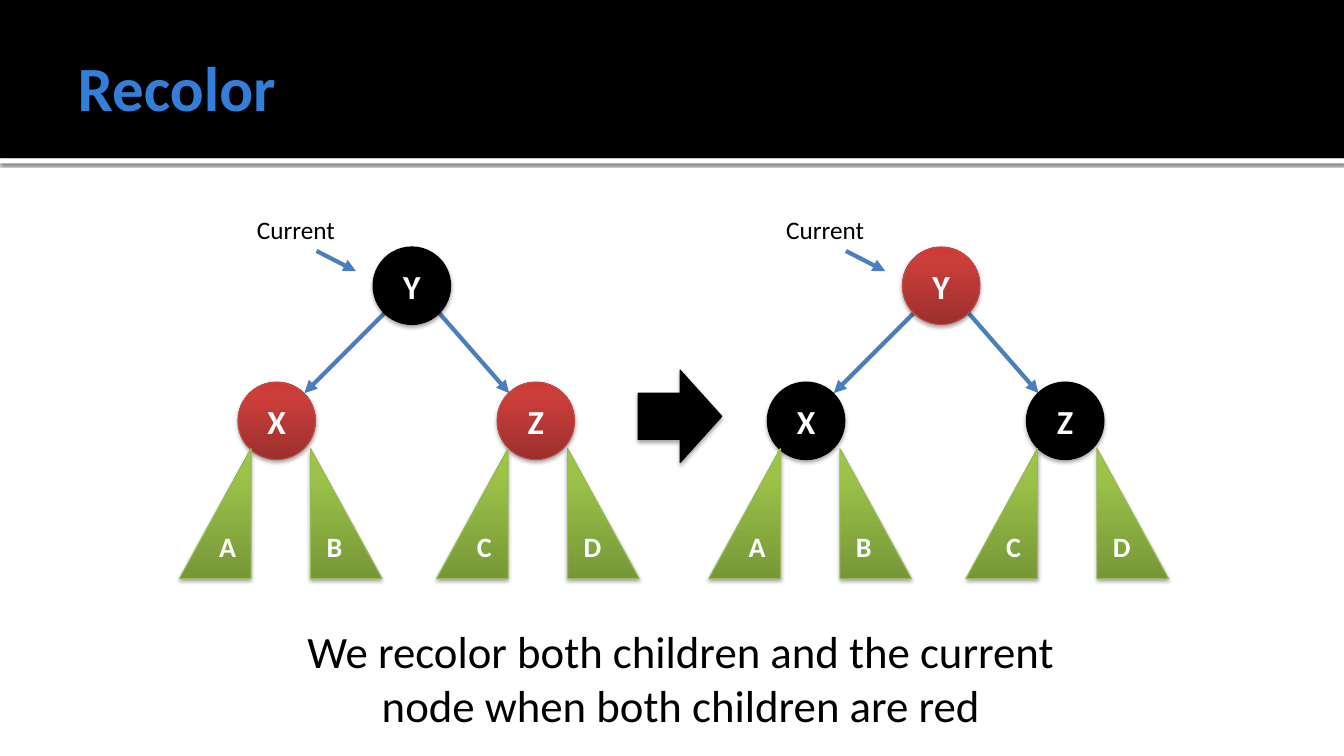
"""Build a slide showing the recolor step of a red-black tree insertion."""
from lxml import etree
from pptx import Presentation
from pptx.dml.color import RGBColor
from pptx.enum.shapes import MSO_CONNECTOR, MSO_SHAPE as SHAPE
from pptx.enum.text import MSO_ANCHOR, MSO_AUTO_SIZE, PP_ALIGN
from pptx.oxml.ns import qn
from pptx.util import Inches, Pt

TITLE = "Recolor"
CAPTION = "We recolor both children and the current node when both children are red"
POINTER = "Current"
FONT = "Calibri"
BLACK, WHITE, BLUE, ARROW = "000000", "FFFFFF", "337ED9", "4B7EBC"

STYLES = {
    "black": ([BLACK], BLACK),
    "red": (["9C2F2D", "CB3E3A", "CE3B37"], "BF4C48"),
    "green": (["779737", "9BC348", "9DC746"], "98B955"),
}
STOPS = [0, 80, 100]

TREES = [
    (0, {"Y": "black", "X": "red", "Z": "red"}),
    (5.25, {"Y": "red", "X": "black", "Z": "black"}),
]
PARTS = [
    ("Y", 3.7, 2.45), ("X", 2.36, 3.79), ("B", 3.08, 4.45), ("A", 1.78, 4.45),
    ("D", 5.63, 4.45), ("Z", 4.93, 3.79), ("C", 4.33, 4.45),
]
LEFT_SUBTREES = "AC"
ARROWS = [
    (3.81, 3.11, 3.02, 3.9),
    (4.36, 3.11, 5.05, 3.9),
    (3.14, 2.49, 3.53, 2.69),
]
NODE, SUBTREE = (0.77, 0.77), (0.71, 1.29)


def rgb(color):
    return RGBColor.from_string(color)


def add_node(parent, tag, **attrs):
    return etree.SubElement(parent, qn(tag), {k: str(v) for k, v in attrs.items()})


def write(shape, text, size, color, bold=False, align=PP_ALIGN.LEFT):
    tf = shape.text_frame
    tf.word_wrap = True
    p = tf.paragraphs[0]
    p.alignment = align
    r = p.add_run()
    r.text = text
    f = r.font
    f.name, f.size, f.bold = FONT, Pt(size), bold
    f.color.rgb = rgb(color)
    return tf


def paint(shape, colors, outline=None):
    if len(colors) == 1:
        shape.fill.solid()
        shape.fill.fore_color.rgb = rgb(colors[0])
    else:
        shape.fill.gradient()
        shape.fill.gradient_angle = 90
        stops = shape.element.spPr.find(".//" + qn("a:gsLst"))
        stops[:] = []
        for pos, color in zip(STOPS, colors):
            gs = add_node(stops, "a:gs", pos=pos * 1000)
            add_node(gs, "a:srgbClr", val=color)
    if outline:
        shape.line.color.rgb = rgb(outline)
        shape.line.width = Pt(0.75)
    else:
        shape.line.fill.background()
    shape.shadow.inherit = False


def cast_shadow(shape, alpha=35, blur=3.1, dist=1.8):
    effects = shape.element.spPr.find(qn("a:effectLst"))
    shadow = add_node(effects, "a:outerShdw", blurRad=Pt(blur), dist=Pt(dist),
                      dir=90 * 60000, rotWithShape=0)
    color = add_node(shadow, "a:srgbClr", val=BLACK)
    add_node(color, "a:alpha", val=alpha * 1000)


def add_box(shapes, kind, x, y, w, h, style):
    shape = shapes.add_shape(kind, Inches(x), Inches(y), Inches(w), Inches(h))
    paint(shape, *STYLES[style])
    cast_shadow(shape)
    return shape


def add_arrow(shapes, x1, y1, x2, y2):
    c = shapes.add_connector(MSO_CONNECTOR.STRAIGHT, Inches(x1), Inches(y1),
                             Inches(x2), Inches(y2))
    c.line.color.rgb = rgb(ARROW)
    c.line.width = Pt(3)
    add_node(c.line._get_or_add_ln(), "a:tailEnd", type="triangle")
    add_node(c.element.spPr, "a:effectLst")


def add_label(shapes, text, x, y, w, h, size, align=PP_ALIGN.LEFT):
    box = shapes.add_textbox(Inches(x), Inches(y), Inches(w), Inches(h))
    tf = write(box, text, size, BLACK, align=align)
    tf.auto_size = MSO_AUTO_SIZE.SHAPE_TO_FIT_TEXT


def add_tree(s, dx, node_colors):
    shapes = s.shapes.add_group_shape().shapes
    for x1, y1, x2, y2 in ARROWS:
        add_arrow(shapes, x1 + dx, y1, x2 + dx, y2)
    for name, x, y in PARTS:
        is_node = name in node_colors
        kind, size, pt = ((SHAPE.OVAL, NODE, 24) if is_node
                          else (SHAPE.RIGHT_TRIANGLE, SUBTREE, 20))
        shape = add_box(shapes, kind, x + dx, y, *size, node_colors.get(name, "green"))
        if name in LEFT_SUBTREES:
            shape.element.spPr.find(qn("a:xfrm")).set("flipH", "1")
        tf = write(shape, name, pt, WHITE, True, PP_ALIGN.CENTER)
        tf.vertical_anchor = MSO_ANCHOR.MIDDLE
    add_label(shapes, POINTER, 2.45 + dx, 2.08, 2.9, 0.4, 18)


def add_header(s):
    title = s.shapes.title
    for y, h, color in [(1.57, 0.05, WHITE), (0, 1.57, BLACK)]:
        band = s.shapes.add_shape(SHAPE.RECTANGLE, 0, Inches(y), Inches(13.33), Inches(h))
        paint(band, [color])
        if color == WHITE:
            cast_shadow(band, 60, 2.5, 0.8)
    s.shapes.element.append(title.element)
    title.left, title.top = Inches(0.67), Inches(0.17)
    title.width, title.height = Inches(12), Inches(1.37)
    tf = write(title, TITLE, 45, BLUE, True)
    tf.auto_size = MSO_AUTO_SIZE.NONE
    tf.vertical_anchor = MSO_ANCHOR.MIDDLE
    tf.margin_left = Inches(0.1)
    tf.margin_top = tf.margin_right = tf.margin_bottom = Inches(0.05)


def main():
    prs = Presentation()
    prs.slide_width, prs.slide_height = Inches(13.33), Inches(7.5)
    s = prs.slides.add_slide(prs.slide_layouts[5])
    add_header(s)
    add_label(s.shapes, CAPTION, 2.76, 6.14, 7.99, 1.18, 32, PP_ALIGN.CENTER)
    for dx, node_colors in TREES:
        add_tree(s, dx, node_colors)
    add_box(s.shapes, SHAPE.RIGHT_ARROW, 6.33, 3.67, 0.83, 0.92, "black")
    prs.save("out.pptx")


if __name__ == "__main__":
    main()
